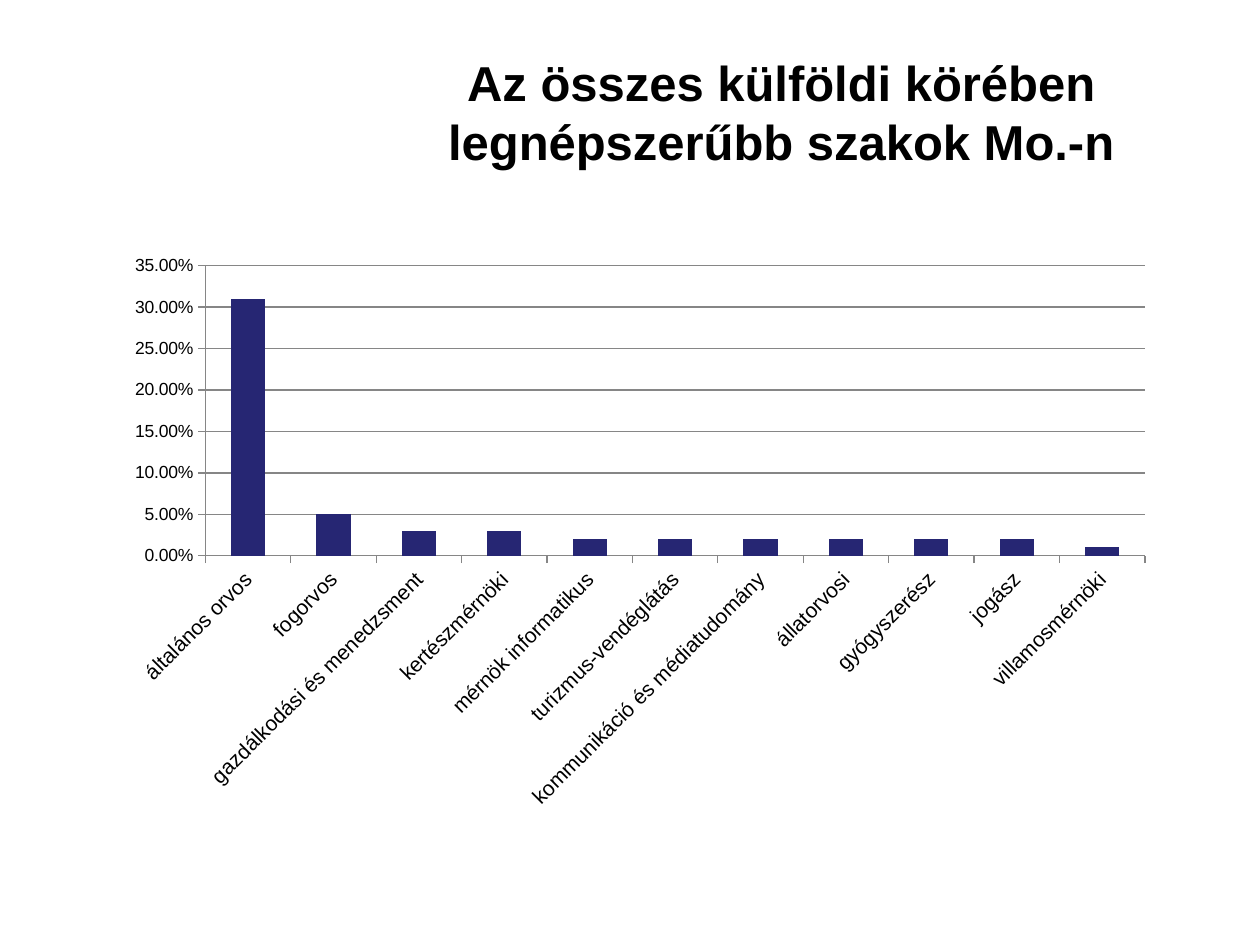
from dataclasses import dataclass

from lxml import etree
from pptx import Presentation
from pptx import util as u
from pptx.chart import data as cd
from pptx.dml.color import RGBColor
from pptx.enum import chart as ch, text as tx
from pptx.oxml import ns


@dataclass(frozen=True)
class Theme:
    face: str = "Arial"
    ink: RGBColor = RGBColor(0, 0, 0)
    bar: RGBColor = RGBColor(0x26, 0x26, 0x73)
    rule: RGBColor = RGBColor(0x86, 0x86, 0x86)
    head: int = 28
    label: int = 12
    tick: int = 10


THEME = Theme()

MAJORS = {
    "általános orvos": 0.31,
    "fogorvos": 0.05,
    "gazdálkodási és menedzsment": 0.03,
    "kertészmérnöki": 0.03,
    "mérnök informatikus": 0.02,
    "turizmus-vendéglátás": 0.02,
    "kommunikáció és médiatudomány": 0.02,
    "állatorvosi": 0.02,
    "gyógyszerész": 0.02,
    "jogász": 0.02,
    "villamosmérnöki": 0.01,
}


def apply(item, form):
    for key, val in form.items():
        setattr(item, key, val)


def style(font, size, bold=False):
    apply(font, {"name": THEME.face, "size": u.Pt(size), "bold": bold})
    font.color.rgb = THEME.ink


def stroke(line):
    line.color.rgb = THEME.rule
    line.width = u.Pt(0.75)


def title(slide, words, box):
    frame = slide.shapes.add_textbox(*map(u.Pt, box)).text_frame
    apply(frame, {"word_wrap": True, "vertical_anchor": tx.MSO_ANCHOR.MIDDLE})
    para = frame.paragraphs[0]
    apply(para, {"text": words, "alignment": tx.PP_ALIGN.CENTER})
    style(para.font, THEME.head, True)


def place(chart, area):
    """Fix the inner plot area as fractions of the chart."""
    plot = chart.plots[0]._element.getparent()
    for old in plot.findall(ns.qn("c:layout")):
        plot.remove(old)
    layout = etree.Element(ns.qn("c:layout"))
    manual = etree.SubElement(layout, ns.qn("c:manualLayout"))
    parts = {"layoutTarget": "inner", "xMode": "edge", "yMode": "edge", **area}
    for tag, val in parts.items():
        etree.SubElement(manual, ns.qn("c:" + tag)).set("val", str(val))
    plot.insert(0, layout)


def columns(slide, box, area):
    data = cd.CategoryChartData(number_format="0.00%")
    data.categories = list(MAJORS)
    data.add_series("Series 1", list(MAJORS.values()))
    kind = ch.XL_CHART_TYPE.COLUMN_CLUSTERED
    chart = slide.shapes.add_chart(kind, *map(u.Pt, box), data).chart
    apply(chart, {"has_legend": False, "has_title": False})
    style(chart.font, THEME.tick)

    # Bars
    plot = chart.plots[0]
    apply(plot, {"gap_width": 150, "vary_by_categories": False})
    fill = plot.series[0].format.fill
    fill.solid()
    fill.fore_color.rgb = THEME.bar

    # Axes
    cats, vals = chart.category_axis, chart.value_axis
    for axis, size in ((cats, THEME.label), (vals, THEME.tick)):
        apply(axis, {"major_tick_mark": ch.XL_TICK_MARK.OUTSIDE,
                     "minor_tick_mark": ch.XL_TICK_MARK.NONE})
        style(axis.tick_labels.font, size)
        stroke(axis.format.line)
    apply(vals, {"minimum_scale": 0, "maximum_scale": 0.35,
                 "major_unit": 0.05, "has_major_gridlines": True})
    stroke(vals.major_gridlines.format.line)
    apply(vals.tick_labels, {"number_format": "0.00%",
                             "number_format_is_linked": False})

    # Slanted category labels
    body = cats._element.find(ns.qn("c:txPr")).find(ns.qn("a:bodyPr"))
    for key, val in {"rot": "-2700000", "vert": "horz"}.items():
        body.set(key, val)
    place(chart, area)


def main():
    deck = Presentation()
    apply(deck, {"slide_width": u.Pt(720), "slide_height": u.Pt(540)})
    slide = deck.slides.add_slide(deck.slide_layouts[6])
    title(slide, "Az összes külföldi körében legnépszerűbb szakok Mo.-n",
          (172.8, 24, 547.2, 79))
    columns(slide, (65.7, 140, 601.2, 329),
            {"x": 0.086, "y": 0.036, "w": 0.893, "h": 0.504})
    deck.save("out.pptx")


if __name__ == "__main__":
    main()
